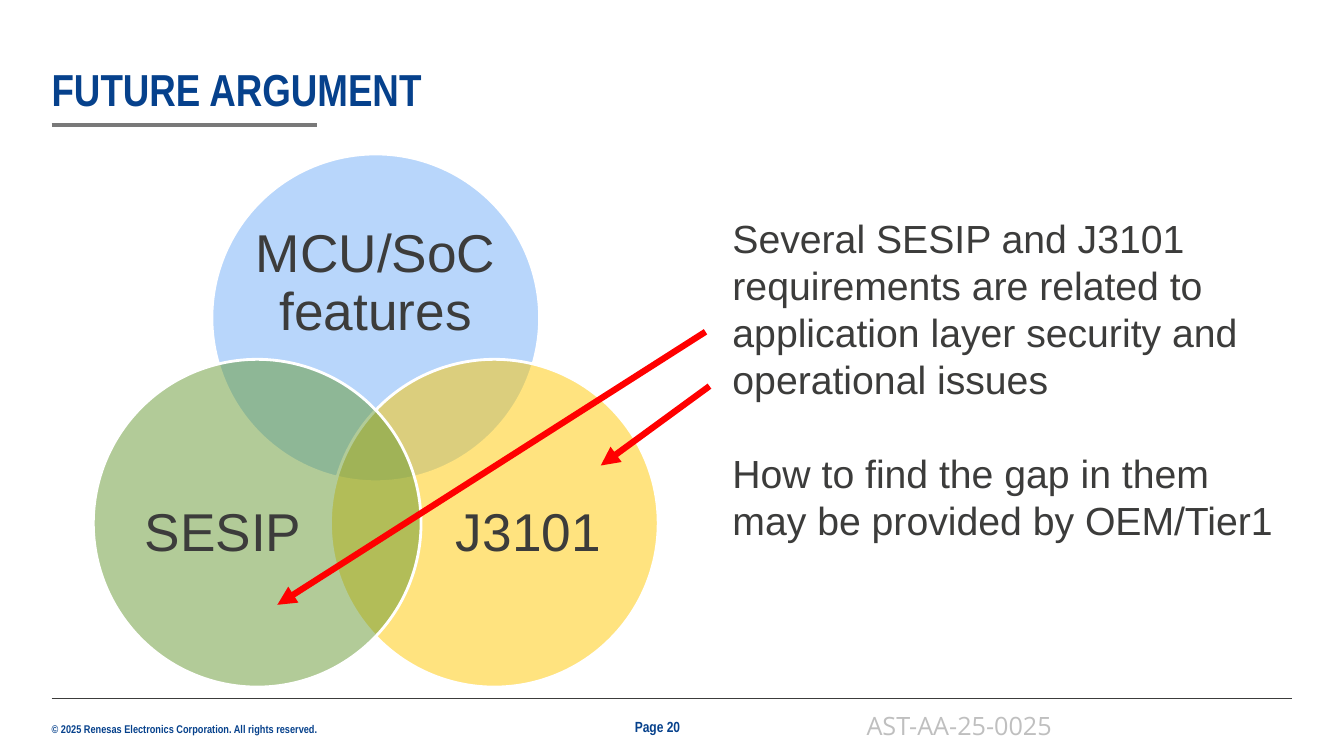
from math import cos, radians, sin

from lxml import etree
from pptx import Presentation
from pptx.dml.color import RGBColor
from pptx.enum.shapes import MSO_CONNECTOR, MSO_SHAPE
from pptx.enum.text import MSO_ANCHOR, MSO_AUTO_SIZE, PP_ALIGN
from pptx.oxml.ns import qn
from pptx.util import Cm, Pt

LEFT, CENTER = PP_ALIGN.LEFT, PP_ALIGN.CENTER
TOP, MIDDLE, BOTTOM = MSO_ANCHOR.TOP, MSO_ANCHOR.MIDDLE, MSO_ANCHOR.BOTTOM
NO_FIT = MSO_AUTO_SIZE.NONE
STRAIGHT, OVAL = MSO_CONNECTOR.STRAIGHT, MSO_SHAPE.OVAL

NAVY, INK, GRAY, RED, WHITE = "06418C", "3C3C3B", "797979", "FF0000", "FFFFFF"

TITLE = "FUTURE ARGUMENT"
TITLE_AREA = (1.3, 1.7, 32.13, 1.22)
TITLE_FONT = {"name": "Arial Narrow", "size": Pt(32), "bold": True}
LABEL_FONT = {"name": "Arial", "size": Pt(38)}
REMARK_FONT = {"name": "Arial", "size": Pt(28)}

FOOTERS = [
    ("© 2025 Renesas Electronics Corporation. All rights reserved.", (1.3, 18.19, 6.93, 0.33), 0,
     {"name": "Arial Narrow", "size": Pt(8), "bold": True}, NAVY),
    ("Page 20", (15.75, 17.96, 1.7, 0.71), 1,
     {"name": "Arial Narrow", "size": Pt(10.5), "bold": True}, NAVY),
    ("AST-AA-25-0025", (21.59, 17.78, 5.28, 1.02), 1,
     {"name": "Open Sans", "size": Pt(18)}, "BFBFBF"),
]

REMARKS = [
    "Several SESIP and J3101",
    "requirements are related to",
    "application layer security and\noperational issues",
    "How to find the gap in them",
    "may be provided by OEM/Tier1",
]
REMARKS_AREA = (18.21, 5.28, 14.3, 8.64)
SECOND_REMARK = 3
REMARK_LINE = Pt(33.6)

VENN_CENTER = (9.47, 11.46)
VENN_RADIUS = 3.45
DIAMETER = 8.26
CIRCLES = [
    ("MCU/SoC features", "73AEF9", -90, (0, -0.85), (6.05, 3.71)),
    ("J3101", "FFC800", 30, (0.86, 0.28), (4.95, 4.55)),
    ("SESIP", "669933", 150, (-0.86, 0.28), (4.95, 4.55)),
]

RULES = [
    ((1.3, 17.6), (32.56, 17.6), INK, 0.5),
    ((1.3, 3.15), (7.98, 3.15), GRAY, 3),
]
ARROWS = [
    ((17.78, 8.36), (6.99, 15.24), RED, 4.5),
    ((17.88, 9.73), (15.14, 11.73), RED, 4.5),
]


def paint(target, color):
    target.rgb = RGBColor.from_string(color)


def write(box, lines, font, color, align=LEFT, anchor=TOP, inset=1, wrap=False, spacing=None):
    frame = box.text_frame
    margins = {"margin_left": 0.25, "margin_right": 0.25, "margin_top": 0.13, "margin_bottom": 0.13}
    for name, value in margins.items():
        setattr(frame, name, Cm(value * inset))
    for name, value in {"word_wrap": wrap, "auto_size": NO_FIT, "vertical_anchor": anchor}.items():
        setattr(frame, name, value)
    for index, line in enumerate(lines):
        para = frame.paragraphs[0] if index == 0 else frame.add_paragraph()
        para.text = line
        para.alignment = align
        para.line_spacing = spacing
        for span in para.runs:
            for name, value in font.items():
                setattr(span.font, name, value)
            paint(span.font.color, color)
    return frame


def add_text(page, area, *args, **options):
    box = page.shapes.add_textbox(*map(Cm, area))
    return write(box, *args, **options)


def add_line(page, start, end, color, width):
    line = page.shapes.add_connector(STRAIGHT, *map(Cm, start + end))
    paint(line.line.color, color)
    line.line.width = Pt(width)
    etree.SubElement(line.line._get_or_add_ln().getparent(), qn("a:effectLst"))
    return line


def centered(x, y, width, height):
    return x - width / 2, y - height / 2, width, height


def add_circle(page, label, color, angle, shift, label_size):
    x = VENN_CENTER[0] + VENN_RADIUS * cos(radians(angle))
    y = VENN_CENTER[1] + VENN_RADIUS * sin(radians(angle))
    circle = page.shapes.add_shape(OVAL, *map(Cm, centered(x, y, DIAMETER, DIAMETER)))
    circle.shadow.inherit = False
    circle.fill.solid()
    paint(circle.fill.fore_color, color)
    tint = circle.fill._xPr.find(qn("a:solidFill"))[0]
    etree.SubElement(tint, qn("a:alpha"), val="50000")
    paint(circle.line.color, WHITE)
    circle.line.width = Pt(2)
    add_text(page, centered(x + shift[0], y + shift[1], *label_size), [label], LABEL_FONT, INK,
             align=CENTER, anchor=MIDDLE, inset=0, wrap=True, spacing=0.9)


def main():
    deck = Presentation()
    deck.slide_width, deck.slide_height = Cm(33.87), Cm(19.05)
    page = deck.slides.add_slide(deck.slide_layouts[5])

    title = page.shapes.title
    for name, value in zip(("left", "top", "width", "height"), TITLE_AREA):
        setattr(title, name, Cm(value))
    write(title, [TITLE], TITLE_FONT, NAVY, anchor=BOTTOM, inset=0, wrap=True, spacing=0.9)

    for rule in RULES:
        add_line(page, *rule)
    for text, area, inset, font, color in FOOTERS:
        add_text(page, area, [text], font, color, inset=inset)
    for circle in CIRCLES:
        add_circle(page, *circle)

    remarks = add_text(page, REMARKS_AREA, REMARKS, REMARK_FONT, INK, spacing=REMARK_LINE)
    remarks.paragraphs[SECOND_REMARK].space_before = REMARK_LINE

    for arrow in ARROWS:
        line = add_line(page, *arrow)
        etree.SubElement(line.line._get_or_add_ln(), qn("a:tailEnd"), type="triangle")

    deck.save("out.pptx")


if __name__ == "__main__":
    main()
